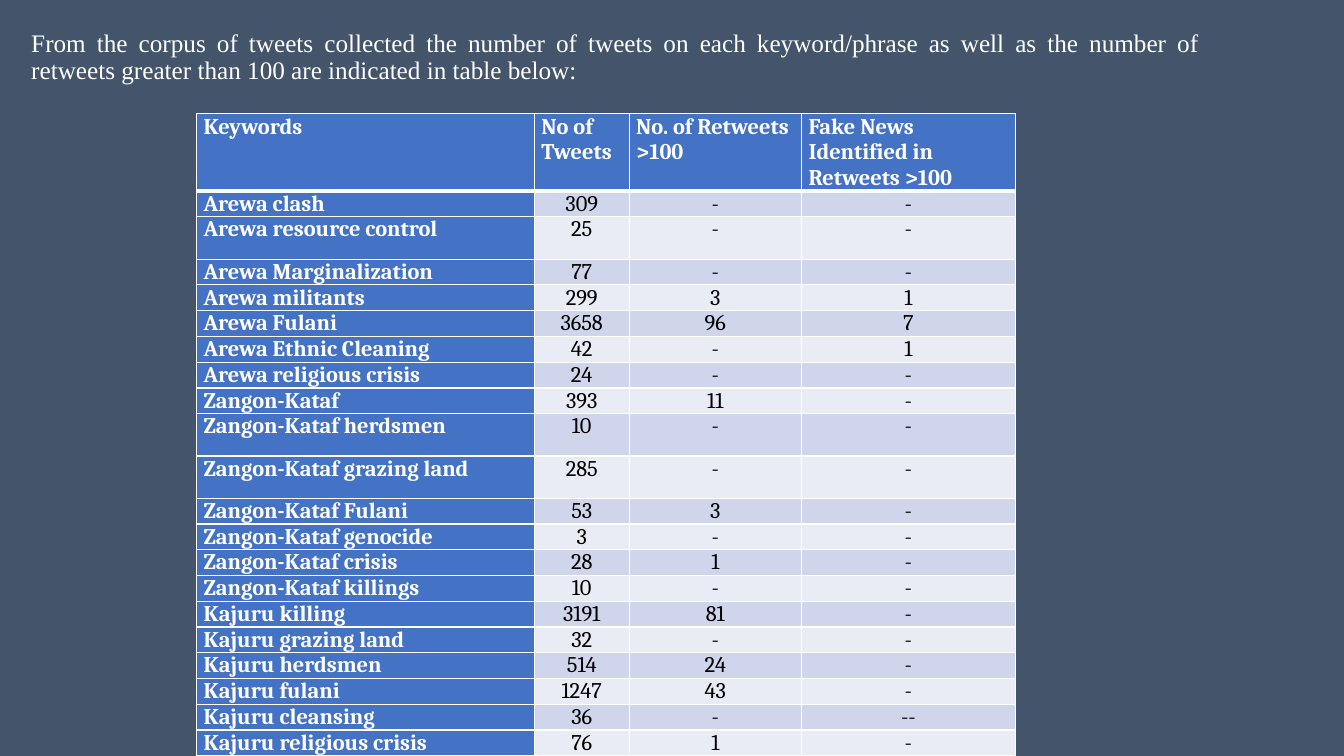
from lxml import etree
from pptx import Presentation, util as u
from pptx.dml.color import RGBColor
from pptx.enum import text
from pptx.oxml import ns

INTRO = ("From the corpus of tweets collected the number of tweets on each keyword/phrase "
         "as well as the number of retweets greater than 100 are indicated in table below:")
HEADER = ("Keywords", "No of Tweets", "No. of Retweets >100",
          "Fake News Identified in Retweets >100")
KEYWORDS = [
    ("Arewa clash", "309", "-", "-"),
    ("Arewa resource control", "25", "-", "-"),
    ("Arewa Marginalization", "77", "-", "-"),
    ("Arewa militants", "299", "3", "1"),
    ("Arewa Fulani", "3658", "96", "7"),
    ("Arewa Ethnic Cleaning", "42", "-", "1"),
    ("Arewa religious crisis", "24", "-", "-"),
    ("Zangon-Kataf", "393", "11", "-"),
    ("Zangon-Kataf herdsmen", "10", "-", "-"),
    ("Zangon-Kataf grazing land", "285", "-", "-"),
    ("Zangon-Kataf Fulani", "53", "3", "-"),
    ("Zangon-Kataf genocide", "3", "-", "-"),
    ("Zangon-Kataf crisis", "28", "1", "-"),
    ("Zangon-Kataf killings", "10", "-", "-"),
    ("Kajuru killing", "3191", "81", "-"),
    ("Kajuru grazing land", "32", "-", "-"),
    ("Kajuru herdsmen", "514", "24", "-"),
    ("Kajuru fulani", "1247", "43", "-"),
    ("Kajuru cleansing", "36", "-", "--"),
    ("Kajuru religious crisis", "76", "1", "-"),
]
ROWS = [HEADER] + KEYWORDS
COL_WIDTHS = (3.35, 0.94, 1.71, 2.12)
ROW_HEIGHT = 0.25
SPECIAL_HEIGHTS = {0: 0.76, 2: 0.42, 9: 0.42, 10: 0.42}
COLORS = {"bg": "44546A", "white": "FFFFFF", "black": "000000",
          "head": "4472C4", "odd": "CFD5EA", "even": "E9EBF5"}


def rgb(name):
    return RGBColor.from_string(COLORS[name])


def add_run(p, words, font, size, color, bold=False):
    r = p.add_run()
    r.text = words
    r.font.name, r.font.size, r.font.bold = font, u.Pt(size), bold
    r.font.color.rgb = rgb(color)


def add_borders(cell, widths):
    tcPr = cell._tc.get_or_add_tcPr()
    for side, width in zip("LRTB", widths):
        ln = etree.SubElement(tcPr, ns.qn("a:ln" + side), w=str(u.Pt(width)))
        fill = etree.SubElement(ln, ns.qn("a:solidFill"))
        etree.SubElement(fill, ns.qn("a:srgbClr"), val=COLORS["white"])


def fill_cell(cell, row, col, words):
    add_borders(cell, (1, 1, 3 if row == 1 else 1, 3 if row == 0 else 1))
    heading = row == 0 or col == 0
    cell.fill.solid()
    cell.fill.fore_color.rgb = rgb("head" if heading else "odd" if row % 2 else "even")
    cell.margin_left = cell.margin_right = u.Inches(0.07)
    cell.margin_top = cell.margin_bottom = 0
    p = cell.text_frame.paragraphs[0]
    p.alignment = text.PP_ALIGN.LEFT if heading else text.PP_ALIGN.CENTER
    add_run(p, words, "Cambria", 16, "white" if heading else "black", heading)


def main():
    prs = Presentation()
    prs.slide_width, prs.slide_height = u.Inches(13.33), u.Inches(7.5)
    s = prs.slides.add_slide(prs.slide_layouts[5])
    s.background.fill.solid()
    s.background.fill.fore_color.rgb = rgb("bg")

    title = s.shapes.title
    title.left, title.top = u.Inches(0.21), u.Inches(0.13)
    title.width, title.height = u.Inches(11.79), u.Inches(0.89)
    tf = title.text_frame
    tf.word_wrap = True
    tf.auto_size = text.MSO_AUTO_SIZE.NONE
    tf.vertical_anchor = text.MSO_ANCHOR.MIDDLE
    p = tf.paragraphs[0]
    p.alignment = text.PP_ALIGN.JUSTIFY
    p.line_spacing = 0.9
    add_run(p, INTRO, "Times New Roman", 18, "white")

    heights = [SPECIAL_HEIGHTS.get(i, ROW_HEIGHT) for i in range(len(ROWS))]
    table = s.shapes.add_table(len(ROWS), len(COL_WIDTHS), u.Inches(1.95), u.Inches(1.13),
                               u.Inches(sum(COL_WIDTHS)), u.Inches(sum(heights))).table
    table.first_col = True
    for column, width in zip(table.columns, COL_WIDTHS):
        column.width = u.Inches(width)
    for i, (height, values) in enumerate(zip(heights, ROWS)):
        table.rows[i].height = u.Inches(height)
        for j, words in enumerate(values):
            fill_cell(table.cell(i, j), i, j, words)

    prs.save("out.pptx")


if __name__ == "__main__":
    main()
